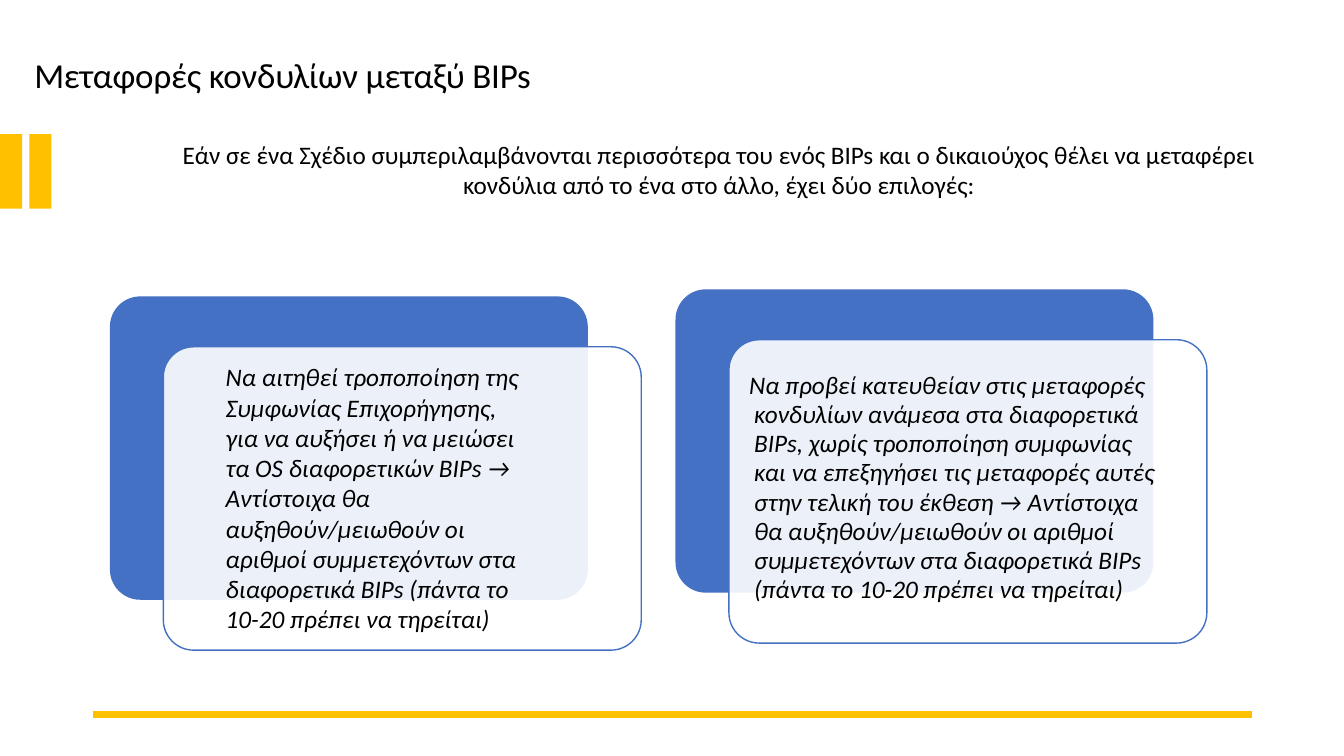
from pptx import Presentation
from pptx.dml.color import RGBColor
from pptx.enum.shapes import MSO_CONNECTOR, MSO_SHAPE
from pptx.enum.text import MSO_AUTO_SIZE, PP_ALIGN
from pptx.oxml.ns import qn
from pptx.util import Inches, Pt
from lxml import etree

RECTANGLE = MSO_SHAPE.RECTANGLE
ROUNDED = MSO_SHAPE.ROUNDED_RECTANGLE
STRAIGHT = MSO_CONNECTOR.STRAIGHT
GROW = MSO_AUTO_SIZE.SHAPE_TO_FIT_TEXT
LEFT, CENTER = PP_ALIGN.LEFT, PP_ALIGN.CENTER

FONT = "Calibri"
AMBER, BLUE, WHITE, BLACK = "FFC000", "4471C4", "FFFFFF", "000000"

TITLE = "Μεταφορές κονδυλίων μεταξύ BIPs"
INTRO = ("Εάν σε ένα Σχέδιο συμπεριλαμβάνονται περισσότερα του ενός BIPs και ο "
         "δικαιούχος θέλει να μεταφέρει κονδύλια από το ένα στο άλλο, έχει δύο επιλογές:")
OUTCOME = (" → Αντίστοιχα θα αυξηθούν/μειωθούν οι αριθμοί συμμετεχόντων στα "
           "διαφορετικά BIPs (πάντα το 10-20 πρέπει να τηρείται)")
AMENDMENT = ("Να αιτηθεί τροποποίηση της Συμφωνίας Επιχορήγησης, για να αυξήσει ή "
             "να μειώσει τα OS διαφορετικών BIPs" + OUTCOME)
DIRECT_TRANSFER = ("Να προβεί κατευθείαν στις μεταφορές κονδυλίων ανάμεσα στα διαφορετικά "
                   "BIPs, χωρίς τροποποίηση συμφωνίας και να επεξηγήσει τις μεταφορές "
                   "αυτές στην τελική του έκθεση" + OUTCOME)


def rgb(value):
    return RGBColor.from_string(value)


def add_block(slide, kind, box, fill, line=None, opacity=None):
    """Add a flat preset shape; opacity is a percentage."""
    block = slide.shapes.add_shape(kind, *map(Inches, box))
    block.shadow.inherit = False
    block.fill.solid()
    block.fill.fore_color.rgb = rgb(fill)
    if opacity is not None:
        color = block.fill._xPr.find(qn("a:solidFill"))[0]
        etree.SubElement(color, qn("a:alpha")).set("val", str(opacity * 1000))
    if line:
        block.line.color.rgb = rgb(line)
        block.line.width = Pt(1)
    else:
        block.line.fill.background()
    return block


def add_text(slide, box, wording, size=18, italic=False, align=LEFT,
             insets=(0.1, 0.05, 0.1, 0.05), indent=None, line_spacing=None,
             space_before=None, tracking=None):
    """Indent is (left margin, first line) in inches; tracking is in points."""
    frame = slide.shapes.add_textbox(*map(Inches, box)).text_frame
    frame.word_wrap = True
    frame.auto_size = GROW
    (frame.margin_left, frame.margin_top,
     frame.margin_right, frame.margin_bottom) = map(Inches, insets)
    paragraph = frame.paragraphs[0]
    paragraph.alignment = align
    if line_spacing:
        paragraph.line_spacing = line_spacing
    if space_before:
        paragraph.space_before = Pt(space_before)
    if indent:
        properties = paragraph._p.get_or_add_pPr()
        for name, length in zip(("marL", "indent"), indent):
            properties.set(name, str(Inches(length)))
    run = paragraph.add_run()
    run.text = wording
    run.font.name = FONT
    run.font.size = Pt(size)
    run.font.italic = italic
    run.font.color.rgb = rgb(BLACK)
    if tracking:
        run._r.get_or_add_rPr().set("spc", str(round(tracking * 100)))


def add_side_bars(slide, left, top):
    for offset in (0, 0.29):
        add_block(slide, RECTANGLE, (left + offset, top, 0.22, 0.74), AMBER)


def add_footer_rule(slide, left, top, width):
    rule = slide.shapes.add_connector(
        STRAIGHT, *map(Inches, (left, top, left + width, top)))
    rule.line.color.rgb = rgb(AMBER)
    rule.line.width = Pt(4.5)
    etree.SubElement(rule._element.spPr, qn("a:effectLst"))


def add_option(slide, left, top, text_box, wording, **text_format):
    """Blue card under a translucent one; text_box is relative to left and top."""
    width, height = 4.74, 3.01
    back = add_block(slide, ROUNDED, (left, top, width, height), BLUE)
    front = add_block(slide, ROUNDED, (left + 0.53, top + 0.5, width, height),
                      WHITE, line=BLUE, opacity=90)
    for card in (back, front):
        card.adjustments[0] = 0.1
    dx, dy, text_width, text_height = text_box
    add_text(slide, (left + dx, top + dy, text_width, text_height), wording,
             italic=True, **text_format)


def add_heading(slide, left, top):
    add_text(slide, (left, top, 5.91, 0.45), TITLE, size=25,
             insets=(0, 0.14, 0, 0), indent=(0.01, 0), line_spacing=0.7,
             space_before=9.9, tracking=-0.1)
    add_text(slide, (left + 1.09, top + 0.83, 11.42, 0.71), INTRO, align=CENTER)


def main():
    deck = Presentation()
    deck.slide_width, deck.slide_height = Inches(13.33), Inches(7.5)
    slide = deck.slides.add_slide(deck.slide_layouts[6])
    add_side_bars(slide, 0, 1.33)
    add_footer_rule(slide, 0.92, 7.09, 11.5)
    add_heading(slide, 0.33, 0.5)
    add_option(slide, 1.09, 2.94, (1.05, 0.6, 3.17, 2.83), AMENDMENT)
    add_option(slide, 6.7, 2.87, (0.72, 0.75, 4.13, 2.4), DIRECT_TRANSFER,
               insets=(0, 0.05, 0, 0), indent=(0.06, -0.05),
               line_spacing=Pt(20.9), space_before=3.2)
    deck.save("out.pptx")


if __name__ == "__main__":
    main()
